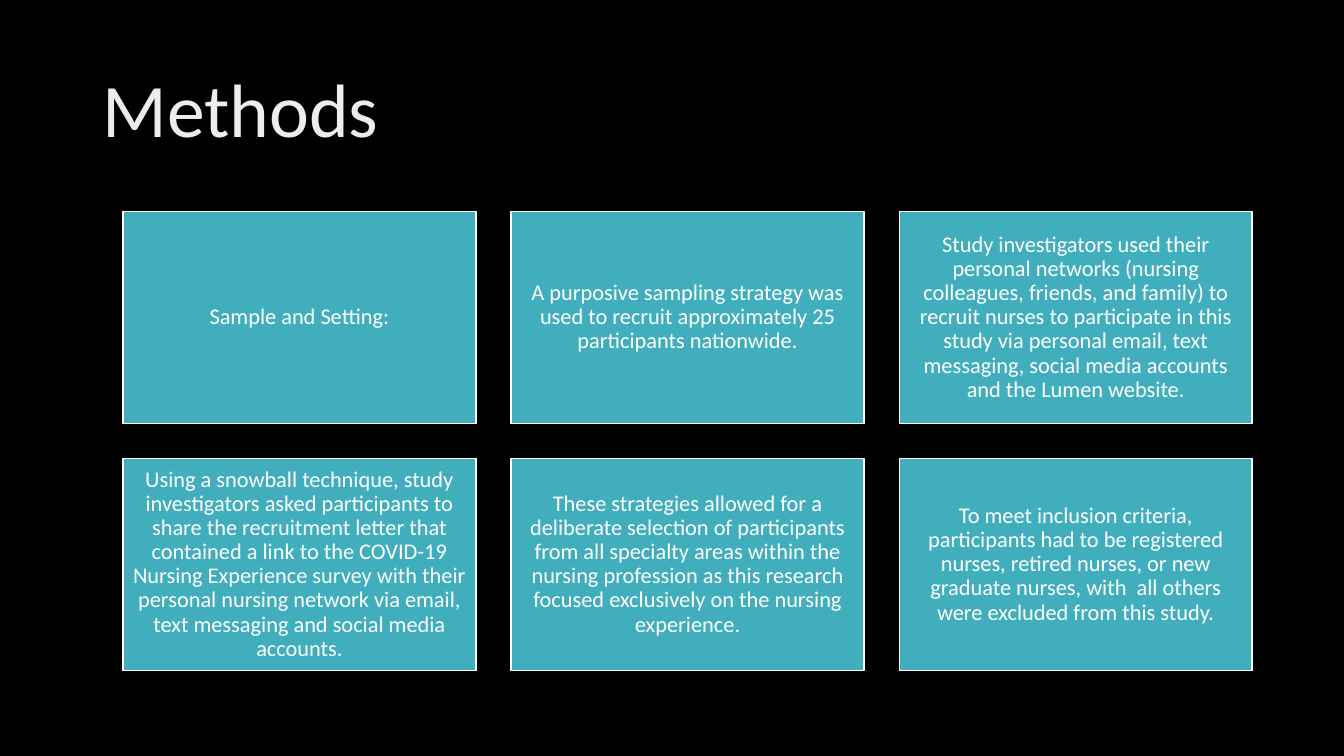
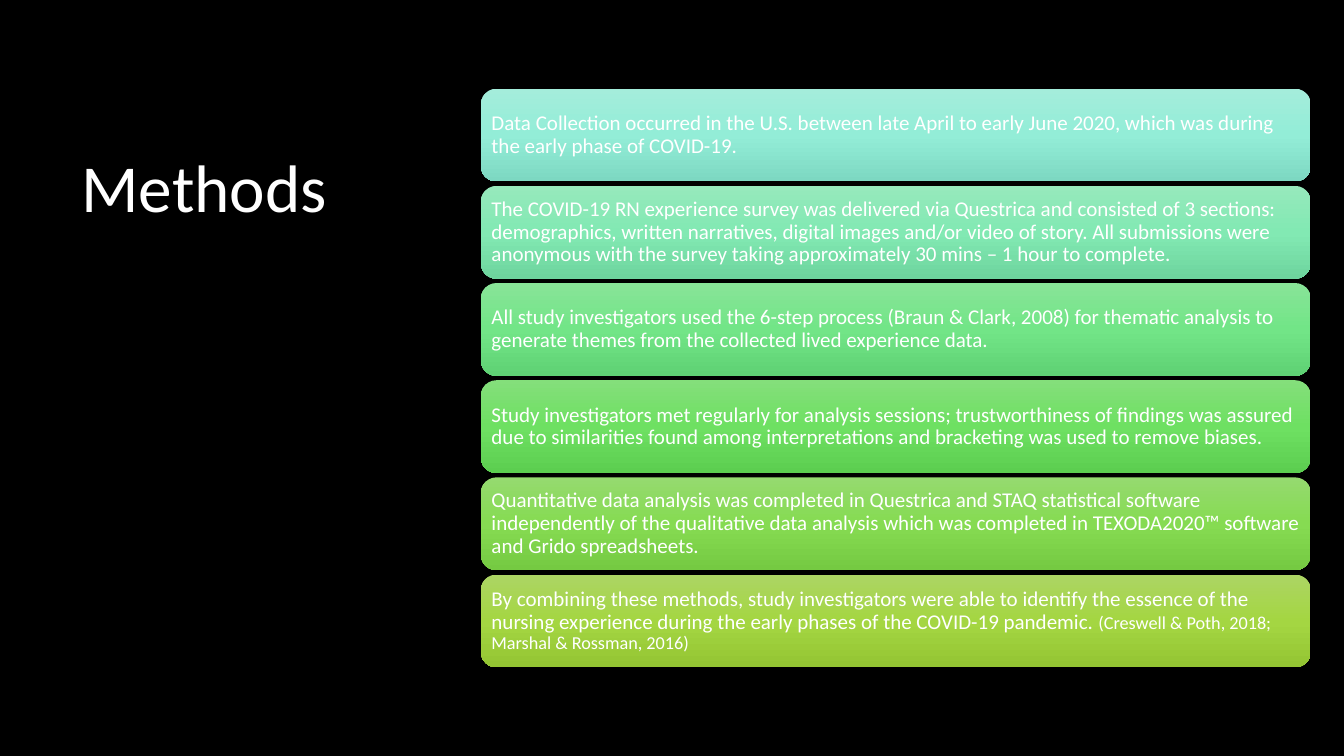
from copy import deepcopy
from dataclasses import dataclass

from pptx import Presentation
from pptx.dml.color import RGBColor
from pptx.enum.shapes import MSO_SHAPE as Preset
from pptx.enum.text import MSO_ANCHOR as Anchor, PP_ALIGN as Align
from pptx.oxml.ns import qn
from pptx.shapes.autoshape import Shape
from pptx.slide import Slide
from pptx.util import Inches, Pt

FONT = "Calibri"
COLORS = {
    "background": "000000",
    "text": "FFFFFF",
    "soft_title": "EDEDED",
    "card": "41AEBD",
}


@dataclass(frozen=True)
class Box:
    left: float
    top: float
    width: float
    height: float

    def lengths(self) -> list[Inches]:
        return [Inches(v) for v in (self.left, self.top, self.width, self.height)]


@dataclass(frozen=True)
class Bar:
    shades: tuple[str, str, str]
    text: str
    citation: str = ""


# Sampling cards: three columns by two rows
CARD_AREA = Box(1.22, 2.1, 3.5, 2.1)
CARD_GAP = 0.35
CARD_COLUMNS = 3
CARDS = [
    "Sample and Setting:",
    "A purposive sampling strategy was used to recruit approximately 25 "
    "participants nationwide.",
    "Study investigators used their personal networks (nursing colleagues, "
    "friends, and family) to recruit nurses to participate in this study via "
    "personal email, text messaging, social media accounts and the Lumen website.",
    "Using a snowball technique, study investigators asked participants to share "
    "the recruitment letter that contained a link to the COVID-19 Nursing "
    "Experience survey with their personal nursing network via email, text "
    "messaging and social media accounts.",
    "These strategies allowed for a deliberate selection of participants from all "
    "specialty areas within the nursing profession as this research focused "
    "exclusively on the nursing experience.",
    "To meet inclusion criteria, participants had to be registered nurses, retired "
    "nurses, or new graduate nurses, with  all others were excluded from this study.",
]

# Data collection and analysis bars: one column, evenly spread
BARS_TOP, BARS_BOTTOM = 0.88, 6.62
BAR_LEFT, BAR_WIDTH, BAR_HEIGHT = 4.77, 8.23, 0.92
BARS = [
    Bar(("A4EDDB", "93EDD7", "7DD8C2"),
        "Data Collection occurred in the U.S. between late April to early June 2020, "
        "which was during the early phase of COVID-19."),
    Bar(("96E9BC", "82E9B3", "6ED59E"),
        "The COVID-19 RN experience survey was delivered via Questrica and consisted "
        "of 3 sections: demographics, written narratives, digital images and/or video "
        "of story. All submissions were anonymous with the survey taking "
        "approximately 30 mins – 1 hour to complete."),
    Bar(("88E498", "72E587", "5FD274"),
        "All study investigators used the 6-step process (Braun & Clark, 2008) for "
        "thematic analysis to generate themes from the collected lived experience data."),
    Bar(("84DF7B", "6EE062", "5CCE50"),
        "Study investigators met regularly for analysis sessions; trustworthiness of "
        "findings was assured due to similarities found among interpretations and "
        "bracketing was used to remove biases."),
    Bar(("95DA6F", "86DB52", "75CA42"),
        "Quantitative data analysis was completed in Questrica and STAQ statistical "
        "software independently of the qualitative data analysis which was completed "
        "in TEXODA2020™ software and Grido spreadsheets."),
    Bar(("ACD564", "A4D642", "94C533"),
        "By combining these methods, study investigators were able to identify the "
        "essence of the nursing experience during the early phases of the COVID-19 "
        "pandemic. ",
        "(Creswell & Poth, 2018; Marshal & Rossman, 2016)"),
]


def color(value: str) -> RGBColor:
    return RGBColor.from_string(value)


def write(shape: Shape, *runs: tuple[str, float], ink: str = COLORS["text"],
          align: Align = Align.LEFT, anchor: Anchor = Anchor.MIDDLE,
          inset_x: float = 0.1, inset_y: float = 0.05) -> None:
    """Fill a shape with one paragraph of (text, point size) runs."""
    frame = shape.text_frame
    frame.word_wrap = True
    frame.vertical_anchor = anchor
    frame.margin_left = frame.margin_right = Inches(inset_x)
    frame.margin_top = frame.margin_bottom = Inches(inset_y)
    paragraph = frame.paragraphs[0]
    paragraph.alignment = align
    paragraph.line_spacing = 0.9
    for text, size in runs:
        run = paragraph.add_run()
        run.text = text
        run.font.name = FONT
        run.font.size = Pt(size)
        run.font.color.rgb = color(ink)


def add_block(slide: Slide, preset: Preset, box: Box) -> Shape:
    block = slide.shapes.add_shape(preset, *box.lengths())
    block.shadow.inherit = False
    return block


def shade(block: Shape, shades: tuple[str, str, str]) -> None:
    """Apply a three-stop gradient running from top to bottom."""
    block.fill.gradient()
    block.fill.gradient_angle = 270
    stop_list = block._element.spPr.find(".//" + qn("a:gsLst"))
    stop_list.append(deepcopy(stop_list[-1]))
    for stop, value, position in zip(block.fill.gradient_stops, shades, (0, 0.5, 1)):
        stop.color.rgb = color(value)
        stop.position = position


def add_methods_slide(deck: Presentation, title_box: Box, size: float,
                      **title_format) -> Slide:
    slide = deck.slides.add_slide(deck.slide_layouts[6])
    slide.background.fill.solid()
    slide.background.fill.fore_color.rgb = color(COLORS["background"])
    title = slide.shapes.add_textbox(*title_box.lengths())
    write(title, ("Methods", size), **title_format)
    return slide


def add_card(slide: Slide, index: int, text: str) -> None:
    row, column = divmod(index, CARD_COLUMNS)
    first = CARD_AREA
    card = add_block(slide, Preset.RECTANGLE, Box(
        first.left + column * (first.width + CARD_GAP),
        first.top + row * (first.height + CARD_GAP),
        first.width, first.height))
    card.fill.solid()
    card.fill.fore_color.rgb = color(COLORS["card"])
    card.line.color.rgb = color(COLORS["text"])
    card.line.width = Pt(1)
    write(card, (text, 16), align=Align.CENTER, inset_x=0.07, inset_y=0.07)


def add_bar(slide: Slide, index: int, bar: Bar) -> None:
    pitch = (BARS_BOTTOM - BARS_TOP - BAR_HEIGHT) / (len(BARS) - 1)
    block = add_block(slide, Preset.ROUNDED_RECTANGLE, Box(
        BAR_LEFT, BARS_TOP + index * pitch, BAR_WIDTH, BAR_HEIGHT))
    shade(block, bar.shades)
    block.line.fill.background()
    runs = [(bar.text, 15)]
    if bar.citation:
        runs.append((bar.citation, 13))
    # The rounded corners already inset the text by about 0.04 inch
    write(block, *runs, inset_x=0.06, inset_y=0.06)


def main() -> None:
    deck = Presentation()
    deck.slide_width, deck.slide_height = Inches(13.33), Inches(7.5)

    # Sample and setting
    sampling = add_methods_slide(deck, Box(0.92, 0.4, 11.5, 1.45), 54,
                                 ink=COLORS["soft_title"])
    for index, text in enumerate(CARDS):
        add_card(sampling, index, text)

    # Data collection and analysis
    analysis = add_methods_slide(deck, Box(0.71, 1.48, 3.21, 4.87), 48,
                                 anchor=Anchor.TOP)
    for index, bar in enumerate(BARS):
        add_bar(analysis, index, bar)

    deck.save("out.pptx")


if __name__ == "__main__":
    main()
